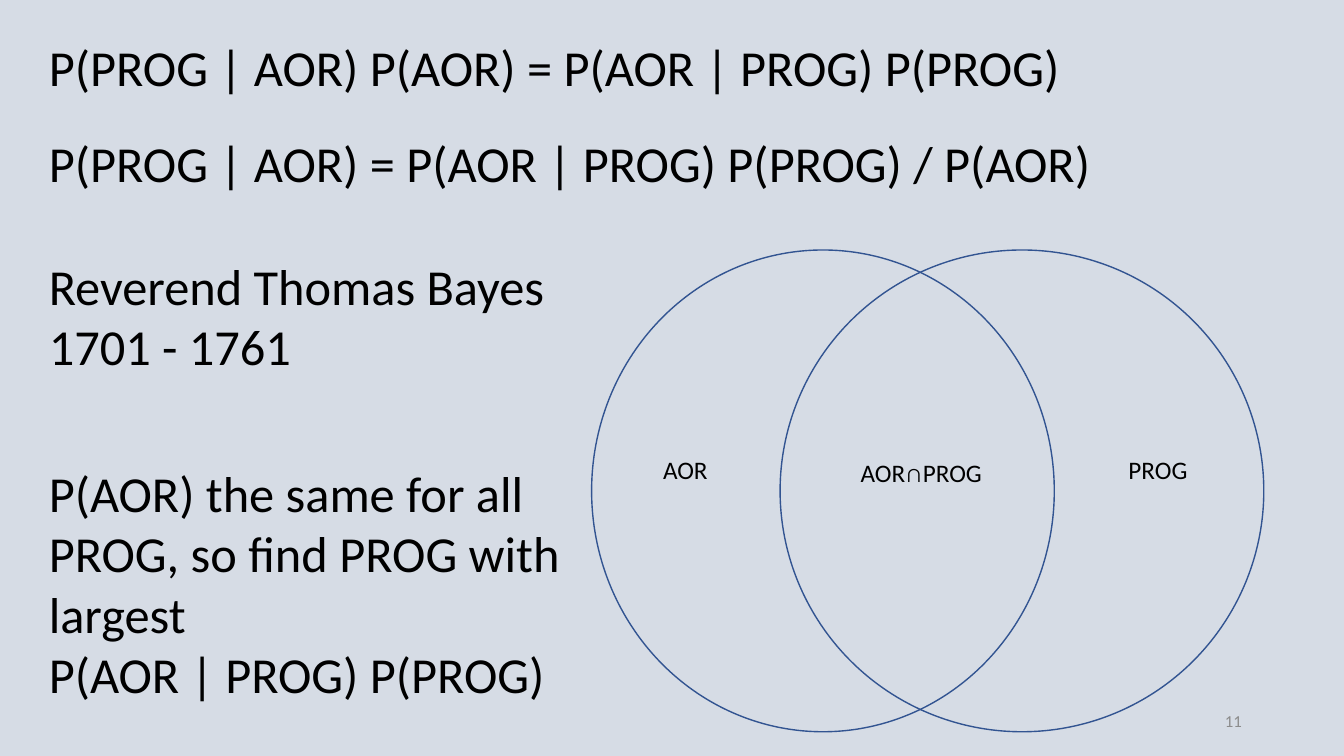
"""Build the slide on Bayes' rule with its Venn diagram."""
from dataclasses import dataclass

from pptx import Presentation
from pptx.dml.color import RGBColor
from pptx.enum.shapes import MSO_SHAPE
from pptx.enum.text import MSO_ANCHOR, MSO_AUTO_SIZE, PP_ALIGN
from pptx.util import Cm, Pt


@dataclass(frozen=True)
class Theme:
    font: str = "Calibri"
    background: str = "D6DCE5"
    outline: str = "325491"
    ink: str = "000000"
    muted: str = "8C8C8C"
    statement_size: int = 36
    label_size: int = 18
    number_size: int = 12


THEME = Theme()
SLIDE_SIZE = (33.87, 19.05)
CIRCLE_TOP, CIRCLE_HEIGHT = 6.3, 12.14
CIRCLES = [(14.91, 11.66), (19.66, 12.19)]
LABEL_HEIGHT = 1.02
LABELS = [
    ("AOR", 16.46, 11.33, 2.64),
    ("PROG", 28.19, 11.33, 3.1),
    ("AOR∩PROG", 21.44, 11.4, 5.13),
]
STATEMENT_LEFT = 0.98
STATEMENTS = [
    (["P(PROG | AOR) P(AOR) = P(AOR | PROG) P(PROG)"], 0.79, 27.2),
    (["P(PROG | AOR) = P(AOR | PROG) P(PROG) / P(AOR)"], 3.2, 27.03),
    (["Reverend Thomas Bayes", "1701 - 1761"], CIRCLE_TOP, 13.11),
    (["P(AOR) the same for all", "PROG, so find PROG with", "largest",
      "P(AOR | PROG) P(PROG)"], 11.51, 13.54),
]
LINE_HEIGHT, BOX_PADDING = 1.53, 0.27
SLIDE_NUMBER = ("11", 23.93, 17.65, 7.62)


def add_circle(slide, left, width):
    circle = slide.shapes.add_shape(
        MSO_SHAPE.OVAL, Cm(left), Cm(CIRCLE_TOP), Cm(width), Cm(CIRCLE_HEIGHT))
    circle.shadow.inherit = False
    circle.fill.background()
    circle.line.color.rgb = RGBColor.from_string(THEME.outline)
    circle.line.width = Pt(1)


def add_text(slide, lines, left, top, width, height, size,
             color=THEME.ink, wrap=True, align=PP_ALIGN.LEFT):
    frame = slide.shapes.add_textbox(
        Cm(left), Cm(top), Cm(width), Cm(height)).text_frame
    frame.word_wrap = wrap
    frame.auto_size = MSO_AUTO_SIZE.SHAPE_TO_FIT_TEXT
    for index, line in enumerate(lines):
        paragraph = frame.add_paragraph() if index else frame.paragraphs[0]
        paragraph.alignment = align
        run = paragraph.add_run()
        run.text = line
        run.font.name = THEME.font
        run.font.size = Pt(size)
        run.font.color.rgb = RGBColor.from_string(color)
    return frame


def main():
    deck = Presentation()
    deck.slide_width, deck.slide_height = map(Cm, SLIDE_SIZE)
    slide = deck.slides.add_slide(deck.slide_layouts[6])
    background = slide.background.fill
    background.solid()
    background.fore_color.rgb = RGBColor.from_string(THEME.background)

    for left, width in CIRCLES:
        add_circle(slide, left, width)
    for label, left, top, width in LABELS:
        add_text(slide, [label], left, top, width, LABEL_HEIGHT, THEME.label_size)
    for lines, top, width in STATEMENTS:
        height = len(lines) * LINE_HEIGHT + BOX_PADDING
        add_text(slide, lines, STATEMENT_LEFT, top, width, height,
                 THEME.statement_size, wrap=False)

    number, left, top, width = SLIDE_NUMBER
    number_frame = add_text(slide, [number], left, top, width, LABEL_HEIGHT,
                            THEME.number_size, THEME.muted, align=PP_ALIGN.RIGHT)
    number_frame.auto_size = MSO_AUTO_SIZE.NONE
    number_frame.vertical_anchor = MSO_ANCHOR.MIDDLE
    deck.save("out.pptx")


if __name__ == "__main__":
    main()
